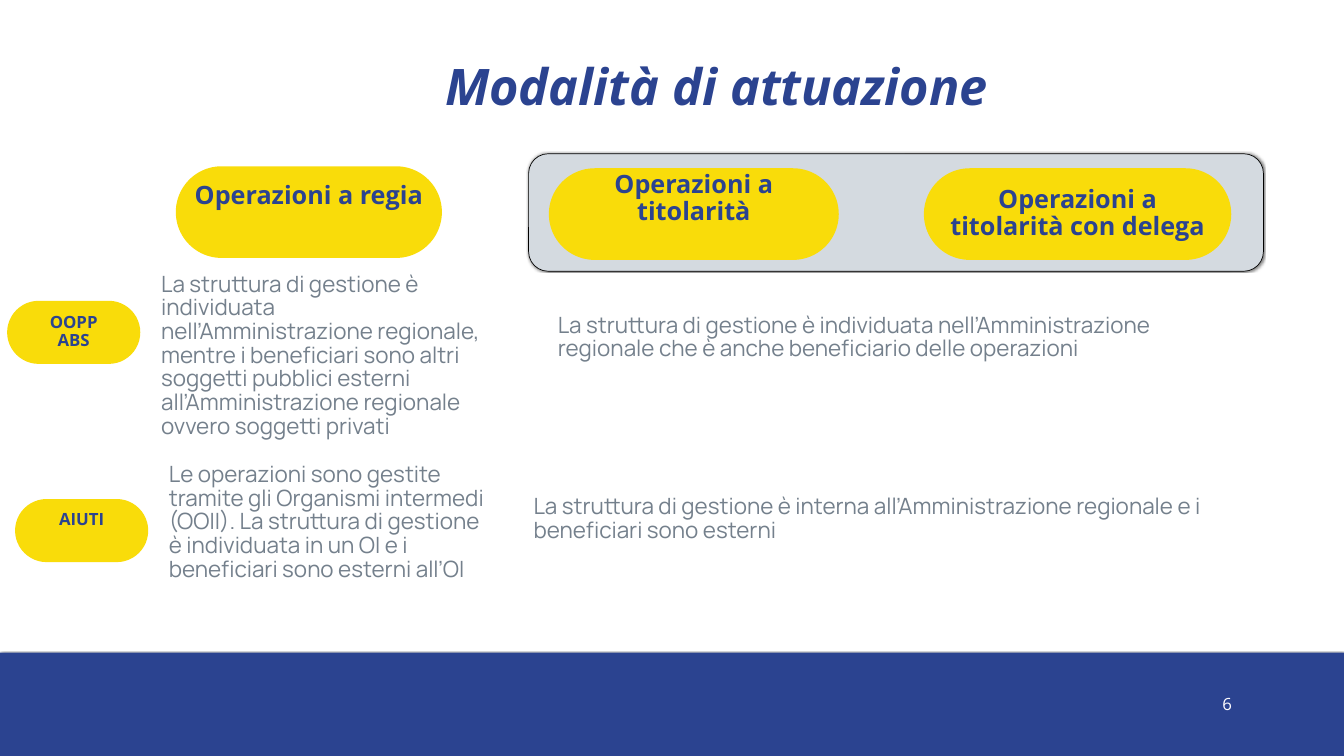
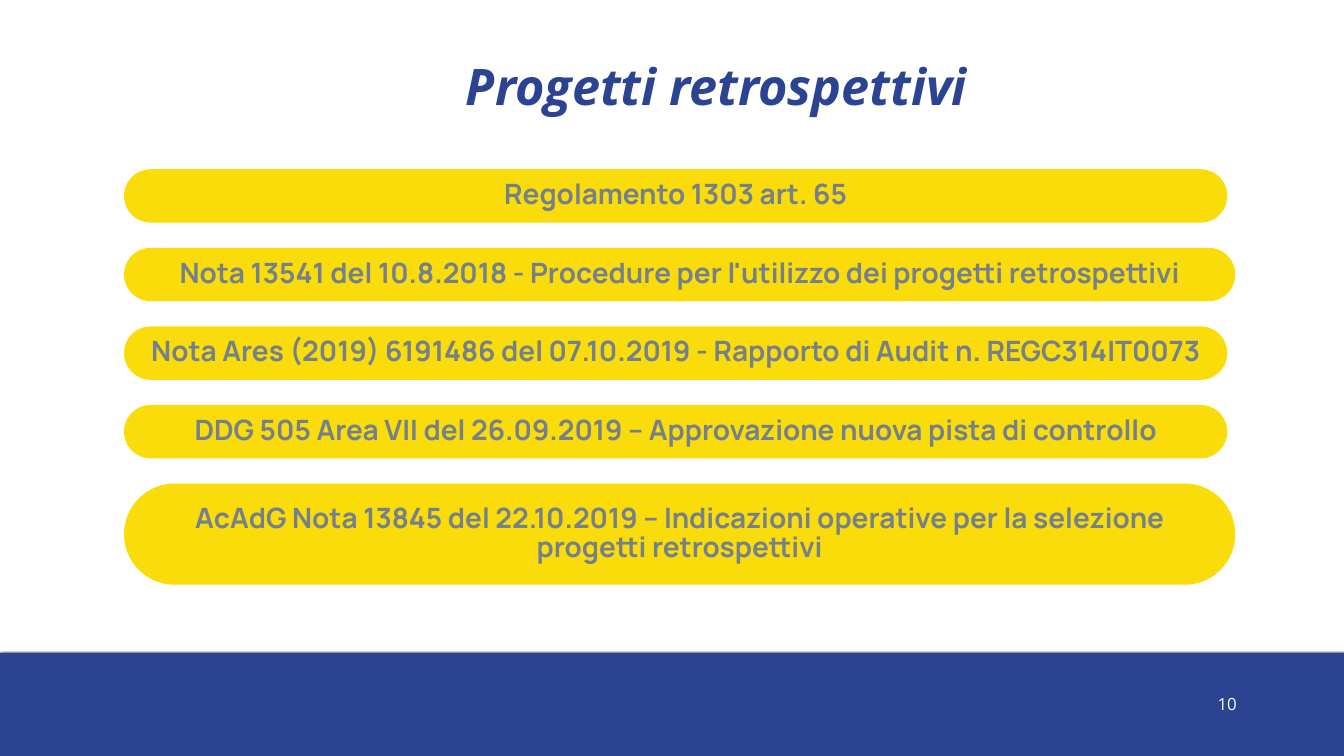
import lxml.etree
import pptx
import pptx.dml.color
import pptx.enum.shapes
import pptx.enum.text
import pptx.oxml.ns
import pptx.util

Cm = pptx.util.Cm
Pt = pptx.util.Pt
SHAPES = pptx.enum.shapes.MSO_SHAPE
ALIGN = pptx.enum.text.PP_ALIGN
ANCHOR = pptx.enum.text.MSO_ANCHOR

BLUE, YELLOW, GRAY, PANEL = "2B4390", "F9DC0A", "74808C", "D4DAE0"
WIDTH, HEIGHT = 67.73, 38.1
BAND_TOP = 32.89
LINE_SPACING = 0.88
PILL_INSET = 0.1
TEXT_INSET = (0.25, 0.13, 0.25, 0.13)

HEADING = dict(size=36, font="Open Sans", color=BLUE, bold=True)
ROW_LABEL = dict(size=24, font="Open Sans", color=BLUE, bold=True)
BODY = dict(size=32, font="Manrope", color=GRAY)
SOURCE = dict(size=40, font="Manrope", color=GRAY, bold=True)
TITLE = dict(size=72, font="Open Sans", color=BLUE, bold=True, italic=True)
NUMBER = dict(size=24, font="Open Sans", color="FEFCFF")

MODES = {
    "title": "Modalità di attuazione",
    "number": "6",
    "panel": (26.64, 7.75, 37.03, 5.92),
    "headings": [
        ("Operazioni a regia", (8.86, 8.38, 13.41, 4.62), 1.52),
        ("Operazioni a titolarità", (27.66, 8.48, 14.61, 4.62), 1.52),
        ("Operazioni a titolarità con delega", (46.56, 8.48, 15.49, 4.62), 0),
    ],
    "row_labels": [
        ("OOPP\nABS", (0.36, 15.16, 6.71, 3.18), 0),
        ("AIUTI", (0.76, 25.15, 6.71, 3.18), 1.02),
    ],
    "descriptions": [
        ("La struttura di gestione è individuata nell’Amministrazione regionale "
         "che è anche beneficiario delle operazioni", (27.86, 15.7, 34.21, 3)),
        ("La struttura di gestione è individuata nell’Amministrazione regionale, "
         "mentre i beneficiari sono altri soggetti pubblici esterni "
         "all’Amministrazione regionale ovvero soggetti privati",
         (7.87, 13.64, 16.94, 8.46)),
        ("La struttura di gestione è interna all’Amministrazione regionale e i "
         "beneficiari sono esterni", (26.64, 24.87, 37.03, 3)),
        ("Le operazioni sono gestite tramite gli Organismi intermedi (OOII). "
         "La struttura di gestione è individuata in un OI e i beneficiari sono "
         "esterni all’OI", (8.26, 23.24, 16.54, 7.09)),
    ],
}

RETROSPECTIVE = {
    "title": "Progetti retrospettivi",
    "number": "10",
    "sources": [
        ("Regolamento 1303 art. 65", 55.6, 2.69),
        ("Nota 13541 del 10.8.2018 - Procedure per l'utilizzo dei progetti "
         "retrospettivi", 56, 2.69),
        ("Nota Ares (2019) 6191486 del 07.10.2019 - Rapporto di Audit n. "
         "REGC314IT0073", 55.6, 2.69),
        ("DDG 505 Area VII del 26.09.2019 – Approvazione nuova pista di controllo",
         55.6, 2.69),
        ("AcAdG Nota 13845 del 22.10.2019 – Indicazioni operative per la selezione "
         "progetti retrospettivi", 56, 5.1),
    ],
}
SOURCES_LEFT, SOURCES_TOP, SOURCES_GAP = 6.25, 8.53, 1.27


def rgb(color):
    return pptx.dml.color.RGBColor.from_string(color)


def write(shape, text, style, align=ALIGN.LEFT, anchor=ANCHOR.TOP,
          insets=TEXT_INSET):
    frame = shape.text_frame
    frame.word_wrap = True
    frame.vertical_anchor = anchor
    (frame.margin_left, frame.margin_top,
     frame.margin_right, frame.margin_bottom) = map(Cm, insets)
    frame.text = text
    for paragraph in frame.paragraphs:
        paragraph.alignment = align
        paragraph.line_spacing = LINE_SPACING
        font = paragraph.font
        font.name = style["font"]
        font.size = Pt(style["size"])
        font.bold = style.get("bold", False)
        font.italic = style.get("italic", False)
        font.color.rgb = rgb(style["color"])


def add_text(slide, text, box, style, **layout):
    write(slide.shapes.add_textbox(*map(Cm, box)), text, style, **layout)


def add_block(slide, kind, box, fill, outline=None):
    block = slide.shapes.add_shape(kind, *map(Cm, box))
    block.shadow.inherit = False
    block.fill.solid()
    block.fill.fore_color.rgb = rgb(fill)
    if outline:
        block.line.color.rgb = rgb(outline)
        block.line.width = Pt(1)
    else:
        block.line.fill.background()
    return block


def add_soft_shadow(block):
    qn = pptx.oxml.ns.qn
    effects = block.element.spPr.find(qn("a:effectLst"))
    shadow = lxml.etree.SubElement(effects, qn("a:outerShdw"),
                                   blurRad=str(Pt(2)), dist="0", dir="0")
    color = lxml.etree.SubElement(shadow, qn("a:srgbClr"), val="000000")
    lxml.etree.SubElement(color, qn("a:alpha"), val="50000")


def add_pill(slide, text, box, style, lift=0):
    pill = add_block(slide, SHAPES.ROUNDED_RECTANGLE, box, YELLOW)
    pill.adjustments[0] = 0.5
    write(pill, text, style, ALIGN.CENTER, ANCHOR.MIDDLE,
          (PILL_INSET, PILL_INSET, PILL_INSET, PILL_INSET + lift))


def start_slide(deck, content):
    slide = deck.slides.add_slide(deck.slide_layouts[6])
    band = add_block(slide, SHAPES.RECTANGLE,
                     (0, BAND_TOP, WIDTH, HEIGHT - BAND_TOP), BLUE)
    add_soft_shadow(band)
    add_text(slide, content["number"], (60.6, 34.98, 2.49, 1.35), NUMBER,
             align=ALIGN.CENTER, insets=(PILL_INSET,) * 4)
    add_text(slide, content["title"], (13.34, 3.02, 45.54, 3.33), TITLE,
             align=ALIGN.CENTER)
    return slide


def build_modes(deck):
    slide = start_slide(deck, MODES)
    panel = add_block(slide, SHAPES.ROUNDED_RECTANGLE, MODES["panel"], PANEL,
                      "000000")
    add_soft_shadow(panel)
    for group, style in (("headings", HEADING), ("row_labels", ROW_LABEL)):
        for text, box, lift in MODES[group]:
            add_pill(slide, text, box, style, lift)
    for text, box in MODES["descriptions"]:
        add_text(slide, text, box, BODY)


def build_retrospective(deck):
    slide = start_slide(deck, RETROSPECTIVE)
    top = SOURCES_TOP
    for text, width, height in RETROSPECTIVE["sources"]:
        add_pill(slide, text, (SOURCES_LEFT, top, width, height), SOURCE)
        top += height + SOURCES_GAP


def main():
    deck = pptx.Presentation()
    deck.slide_width, deck.slide_height = Cm(WIDTH), Cm(HEIGHT)
    build_modes(deck)
    build_retrospective(deck)
    deck.save("out.pptx")


if __name__ == "__main__":
    main()
